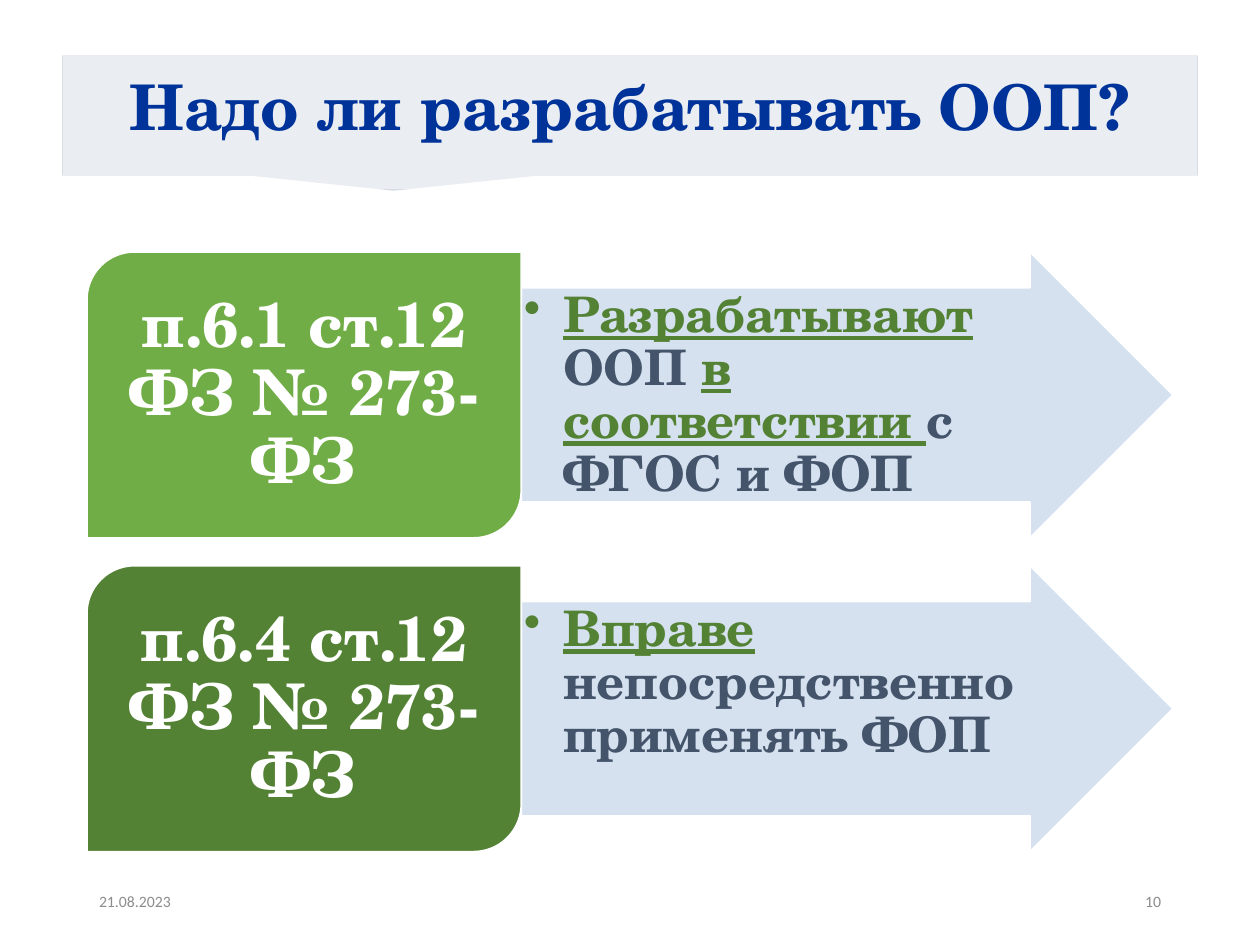
"""Build the slide on whether schools must develop their own programme."""
from typing import NamedTuple

from lxml import etree
from pptx import Presentation
from pptx.dml.color import RGBColor
from pptx.enum.shapes import MSO_SHAPE
from pptx.enum.text import MSO_ANCHOR, PP_ALIGN
from pptx.oxml.ns import qn
from pptx.util import Pt

RECT = MSO_SHAPE.RECTANGLE
CALLOUT = MSO_SHAPE.RECTANGULAR_CALLOUT
ARROW = MSO_SHAPE.RIGHT_ARROW
DIAGONAL = MSO_SHAPE.ROUND_2_DIAG_RECTANGLE
TOP, MIDDLE = MSO_ANCHOR.TOP, MSO_ANCHOR.MIDDLE
LEFT, CENTER, RIGHT = PP_ALIGN.LEFT, PP_ALIGN.CENTER, PP_ALIGN.RIGHT

SERIF, SANS = "TeX Gyre Schola", "Calibri"
COLORS = {
    "white": "FFFFFF", "banner": "D6DCE5", "title": "003399",
    "arrow": "D2DEEF", "light": "70AD47", "green": "548235",
    "slate": "44546A", "gray": "8C8C8C",
}
ROW_TOP, ROW_STEP, ROW_HEIGHT = 144, 179.3, 163.4
LABEL_LEFT, LABEL_WIDTH = 49.7, 248.2
ARROW_LEFT, ARROW_WIDTH = 297.9, 372.4


class Box(NamedTuple):
    left: float
    top: float
    width: float
    height: float


class Style(NamedTuple):
    size: float
    font: str = SERIF
    bold: bool = True
    align: PP_ALIGN = CENTER
    anchor: MSO_ANCHOR = MIDDLE
    inset: tuple[float, float] = (7.2, 3.6)
    spacing: float = 0.9
    indent: float = 0


class Run(NamedTuple):
    text: str
    color: str
    underline: bool = False


class Row(NamedTuple):
    label: str
    fill: str
    runs: list[Run]


TITLE = Style(36)
LABEL = Style(36, inset=(10.8, 5.04))
BODY = Style(28, align=LEFT, anchor=TOP, inset=(1.44, 1.44), indent=22.5)
DATE = Style(9, SANS, False, LEFT, spacing=1)
NUMBER = DATE._replace(align=RIGHT)

ROWS = [
    Row("п.6.1 ст.12 ФЗ № 273-ФЗ", "light", [
        Run("Разрабатывают", "green", True), Run(" ООП ", "slate"),
        Run("в", "green", True), Run(" ", "green", True),
        Run("соответствии ", "green", True), Run("с ФГОС и ФОП", "slate"),
    ]),
    Row("п.6.4 ст.12 ФЗ № 273-ФЗ", "green", [
        Run("Вправе", "green", True), Run(" ", "green"),
        Run("непосредственно применять ФОП", "slate"),
    ]),
]


def rgb(name: str) -> RGBColor:
    return RGBColor.from_string(COLORS[name])


def add_shape(s, kind: MSO_SHAPE, box: Box, fill: str,
              line: str | None = None, alpha: int = 100):
    sp = s.shapes.add_shape(kind, *map(Pt, box))
    sp.shadow.inherit = False
    sp.fill.solid()
    sp.fill.fore_color.rgb = rgb(fill)
    if alpha < 100:
        color = next(sp.element.spPr.iter(qn("a:srgbClr")))
        etree.SubElement(color, qn("a:alpha"), val=str(alpha * 1000))
    if line:
        sp.line.color.rgb = rgb(line)
        sp.line.width = Pt(1)
    else:
        sp.line.fill.background()
    return sp


def write(sp, runs: list[Run], style: Style) -> None:
    tf = sp.text_frame
    tf.word_wrap = True
    tf.vertical_anchor = style.anchor
    tf.margin_left = tf.margin_right = Pt(style.inset[0])
    tf.margin_top = tf.margin_bottom = Pt(style.inset[1])
    p = tf.paragraphs[0]
    p.alignment = style.align
    p.line_spacing = style.spacing
    if style.indent:
        pPr = p._p.get_or_add_pPr()
        pPr.set("marL", str(Pt(style.indent)))
        pPr.set("indent", str(-Pt(style.indent)))
        etree.SubElement(pPr, qn("a:buChar"), char="•")
    for run in runs:
        r = p.add_run()
        r.text = run.text
        r.font.name = style.font
        r.font.size = Pt(style.size)
        r.font.bold = style.bold
        r.font.underline = run.underline
        r.font.color.rgb = rgb(run.color)


def add_text(s, box: Box, runs: list[Run], style: Style) -> None:
    write(s.shapes.add_textbox(*map(Pt, box)), runs, style)


def add_row(s, row: Row, top: float) -> None:
    sp = add_shape(s, ARROW, Box(ARROW_LEFT, top, ARROW_WIDTH, ROW_HEIGHT),
                   "arrow", "white", 90)
    sp.adjustments[0], sp.adjustments[1] = 0.75, 0.5
    add_text(s, Box(ARROW_LEFT, top + ROW_HEIGHT / 8, 311.5, ROW_HEIGHT * 0.75),
             row.runs, BODY)
    add_shape(s, DIAGONAL, Box(LABEL_LEFT, top, LABEL_WIDTH, ROW_HEIGHT),
              row.fill, "white")
    add_text(s, Box(LABEL_LEFT + 8, top + 8, LABEL_WIDTH - 16, ROW_HEIGHT - 16),
             [Run(row.label, "white")], LABEL)


def main() -> None:
    prs = Presentation()
    prs.slide_width, prs.slide_height = Pt(720), Pt(540)
    s = prs.slides.add_slide(prs.slide_layouts[6])
    add_shape(s, CALLOUT, Box(36, 32, 648, 68), "banner", "banner")
    sp = add_shape(s, RECT, Box(36, 18, 648, 90), "white", alpha=50)
    write(sp, [Run("Надо ли разрабатывать ООП?", "title")], TITLE)
    for i, row in enumerate(ROWS):
        add_row(s, row, ROW_TOP + i * ROW_STEP)
    add_text(s, Box(49.5, 500.5, 162, 28.75), [Run("21.08.2023", "gray")], DATE)
    add_text(s, Box(508.5, 500.5, 162, 28.75), [Run("10", "gray")], NUMBER)
    prs.save("out.pptx")


if __name__ == "__main__":
    main()
